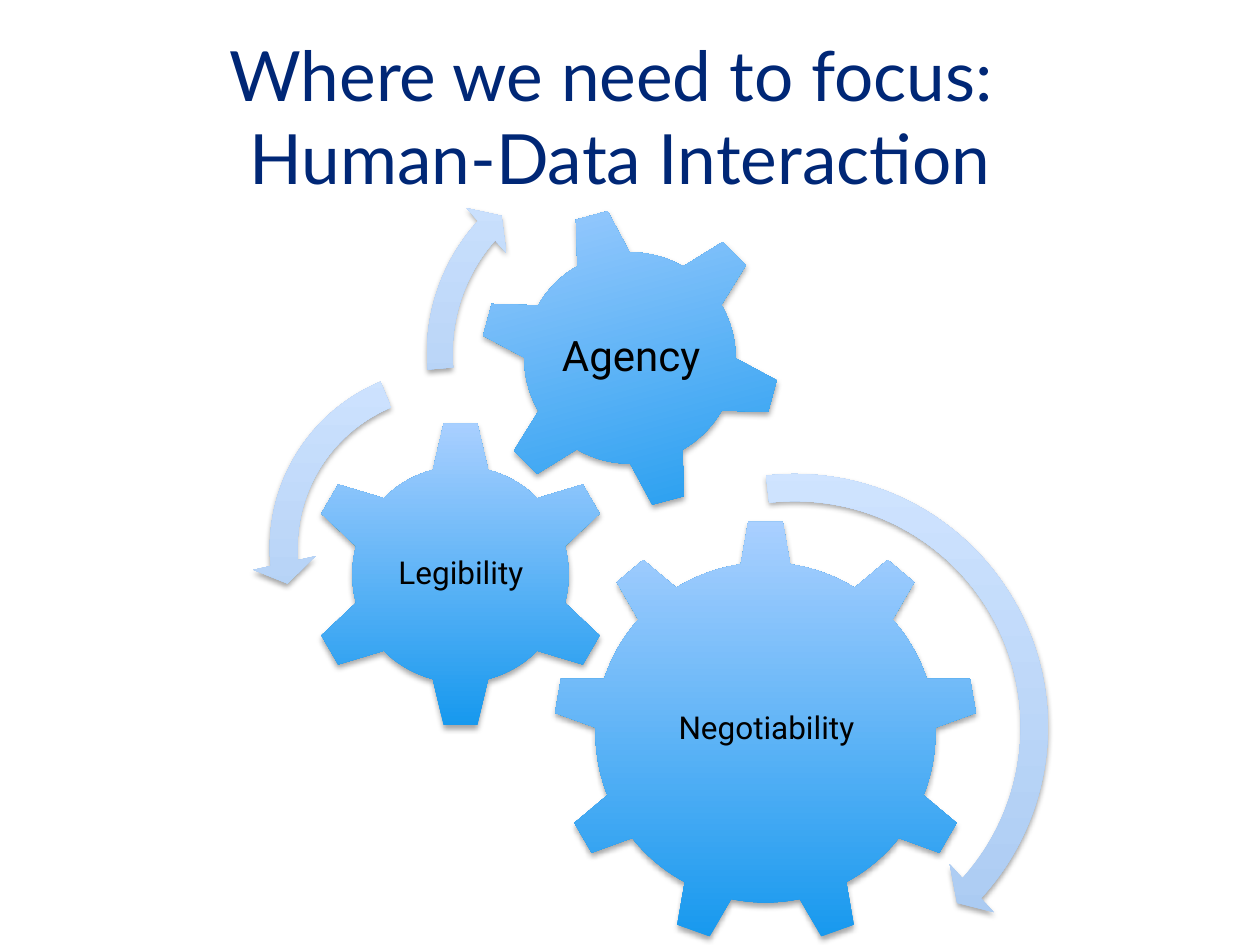
from lxml import etree
from pptx import Presentation
from pptx.dml.color import RGBColor
from pptx.enum.shapes import MSO_SHAPE
from pptx.enum.text import MSO_ANCHOR, PP_ALIGN
from pptx.oxml.ns import qn
from pptx.util import Emu, Pt

PX = 914400 / 126
COLORS = {
    "title": "002776",
    "label": "000000",
    "shadow": "000000",
    "gear bottom": "1598EE",
    "gear top": "AAD0FF",
    "arrow bottom": "A5C7F0",
    "arrow top": "D0E4FF",
}


def add_part(kind, left, top, size, name):
    """Add a square shape with an upward gradient and a soft shadow below."""
    part = page.shapes.add_shape(kind, *(Emu(round(n * PX)) for n in (left, top, size, size)))
    part.line.fill.background()
    part.fill.gradient()
    part.fill.gradient_angle = 90
    for stop, position, end in zip(part.fill.gradient_stops, (0, 1), ("bottom", "top")):
        stop.position = position
        stop.color.rgb = RGBColor.from_string(COLORS[f"{name} {end}"])
    part.shadow.inherit = False
    effects = part._element.spPr.find(qn("a:effectLst"))
    shadow = etree.SubElement(effects, qn("a:outerShdw"), blurRad="40000", dist="23000",
                              dir="5400000", rotWithShape="0")
    color = etree.SubElement(shadow, qn("a:srgbClr"), val=COLORS["shadow"])
    etree.SubElement(color, qn("a:alpha"), val="35000")
    return part


def add_text(lines, left, top, width, height, font, size, color, inset, spacing):
    box = page.shapes.add_textbox(*(Emu(round(n * PX)) for n in (left, top, width, height)))
    frame = box.text_frame
    frame.word_wrap = True
    frame.vertical_anchor = MSO_ANCHOR.MIDDLE
    frame.margin_left = frame.margin_right = Emu(round(inset[0] * PX))
    frame.margin_top = frame.margin_bottom = Emu(round(inset[1] * PX))
    paragraph = frame.paragraphs[0]
    paragraph.alignment = PP_ALIGN.CENTER
    paragraph.line_spacing = spacing
    for index, line in enumerate(lines):
        if index:
            paragraph.add_line_break()
        span = paragraph.add_run()
        span.text = line
        span.font.name = font
        span.font.size = Pt(size)
        span.font.color.rgb = RGBColor.from_string(COLORS[color])


deck = Presentation()
deck.slide_width = Emu(round(1260 * PX))
deck.slide_height = Emu(round(945 * PX))
page = deck.slides.add_slide(deck.slide_layouts[6])

add_text(["Where we need to focus: ", "Human-Data Interaction"], 96, 58, 1048, 115,
         "Lato", 39.6, "title", (13, 6), 1.0)

# Gear: kind, left, top, size, rotation; label: text, left, top, width, height, font size
gears = [
    (MSO_SHAPE.GEAR_9, 553, 520, 425, 0, "Negotiability", 639, 620, 255, 218, 18),
    (MSO_SHAPE.GEAR_6, 306, 420, 309, 0, "Legibility", 384, 498, 154, 152, 18),
    (MSO_SHAPE.GEAR_6, 479, 207, 302, 345, "Agency", 546, 273, 170, 170, 24),
]
for kind, left, top, size, rotation, label, *label_area, font_size in gears:
    gear = add_part(kind, left, top, size, "gear")
    gear.rotation = rotation
    add_text([label], *label_area, "Roboto", font_size, "label", (4, 4), 0.9)

# Adjustments: band thickness, head angle, end angle, start angle, head width
arrows = [
    (MSO_SHAPE.CIRCULAR_ARROW, 523, 455, 544, (0.05, 2.99, 25.42, 158.07, 0.06)),
    (MSO_SHAPE.LEFT_CIRCULAR_ARROW, 252, 350, 396, (0.07, 4.3, 104.89, 148.38, 0.08)),
    (MSO_SHAPE.CIRCULAR_ARROW, 410, 140, 426, (0.06, 3.94, 133.14, 105.08, 0.07)),
]
for kind, left, top, size, adjustments in arrows:
    arrow = add_part(kind, left, top, size, "arrow")
    for index, value in enumerate(adjustments):
        arrow.adjustments[index] = value

deck.save("out.pptx")
